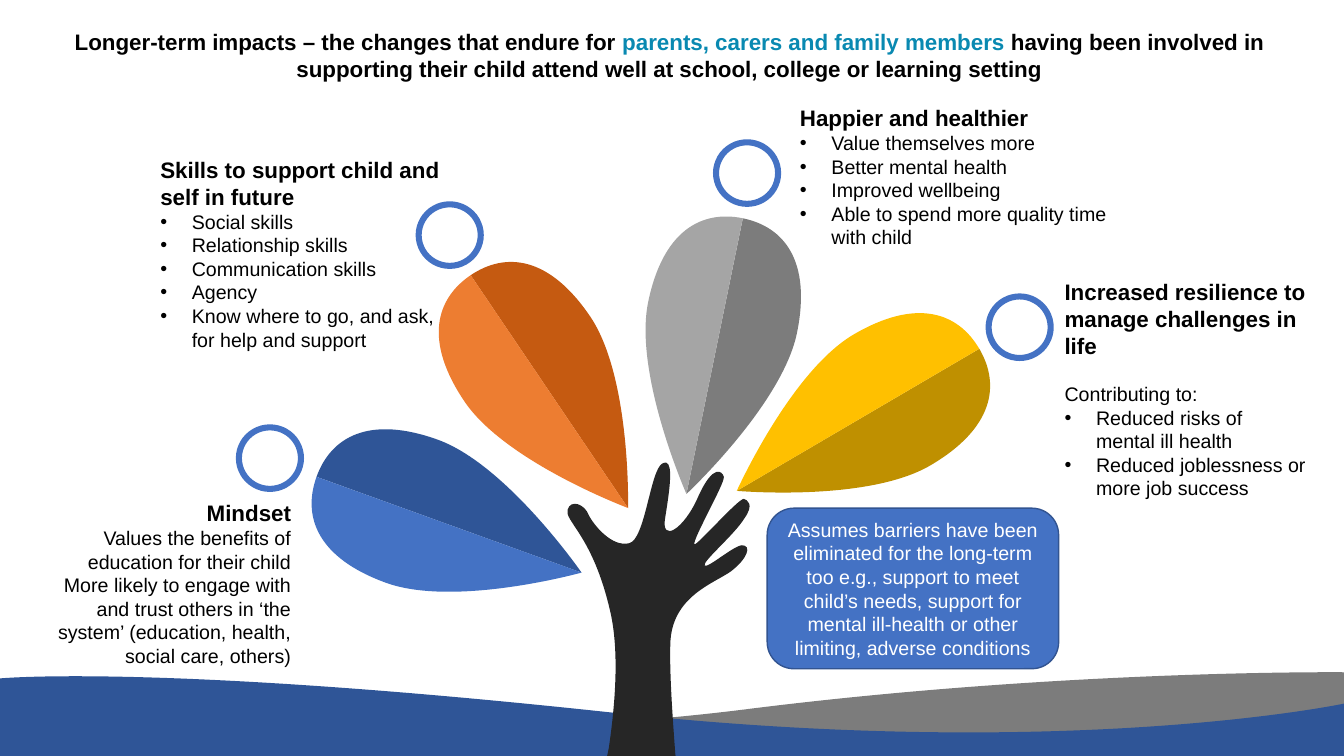
"""Build a slide showing the longer-term impacts for families as a hand-shaped tree."""
import math
import lxml.etree
import pptx
import pptx.dml.color
import pptx.enum.shapes
import pptx.enum.text
import pptx.oxml.ns
import pptx.util

Pt = pptx.util.Pt
qn = pptx.oxml.ns.qn
ALIGN = pptx.enum.text.PP_ALIGN
SHAPE = pptx.enum.shapes.MSO_SHAPE

COLOURS = {
    "ink": "000000", "paper": "FFFFFF", "teal": "0989B1", "trunk": "262626",
    "blue": "4472C4", "navy": "2F5597", "edge": "325491",
    "orange": "ED7D31", "rust": "C55A11", "silver": "A5A5A5", "grey": "7C7C7C",
    "yellow": "FFC000", "mustard": "BF9000",
}
FONTS = {
    "heading": {"name": "Arial", "size": Pt(16), "bold": True},
    "body": {"name": "Arial", "size": Pt(14), "bold": False},
}
FONTS["bullet"] = FONTS["body"]
SPACING = {"space_before": Pt(0), "space_after": Pt(0)}
CURVE_STEPS = 16

LEAF_TILT = 105.5
LEAF_EDGE = [(0, 0), (0, 0, 0.38, 0.27, 0.64, 0.27), (0.9, 0.27, 1, 0.15, 1, 0)]
LEAVES = [
    ((415.4, 409), (226.1, 340.6), "navy", "blue"),
    ((526.3, 350.6), (699.5, 249.1), "mustard", "yellow"),
    ((448.6, 362.9), (336.2, 196.6), "rust", "orange"),
    ((490.3, 352.8), (530.6, 155.9), "grey", "silver"),
]
RINGS = [(168.5, 303.1), (296.9, 143.8), (509.3, 99.5), (704, 209.6)]
FAR_HILL = [(960, 480.2), (960, 480.2, 760.8, 478.1, 536.4, 506.2),
            (311, 535, 0, 522, 0, 522), (0, 540), (960, 540)]
NEAR_HILL = [(0, 484.6), (0, 484.6, 110.9, 473.8, 437, 509),
             (763.2, 544.3, 960, 502.6, 960, 502.6), (960, 540.7), (0, 540.7)]
HAND = [
    (475.9, 330.5),
    (481, 331.9, 478.1, 351.4, 475.2, 369.4),
    (471.6, 388.8, 488.9, 378, 499, 354.2),
    (509.8, 330.5, 516.2, 337, 517, 340.6),
    (518.4, 344.2, 493.9, 386.6, 496.1, 388.8),
    (497.5, 390.2, 527.8, 355.7, 531.4, 356.4),
    (533.5, 357.1, 539.3, 360, 531.4, 370.8),
    (524.2, 382.3, 501.8, 401, 503.3, 403.9),
    (504.7, 406.8, 523.4, 390.2, 529.9, 389.5),
    (537.1, 389.5, 534.2, 398.9, 522, 408.2),
    (509.8, 416.9, 479.5, 426.2, 478.8, 460.1),
    (478.1, 483.1, 481, 519.1, 482.4, 539.3),
    (483.1, 541.4), (433.4, 541.4), (434.9, 534.2),
    (439.2, 504.7, 442.8, 465.1, 435.6, 435.6),
    (423.4, 383, 403.2, 372.2, 405.4, 364.3),
    (407.5, 356.4, 417.6, 360, 420.5, 367.9),
    (424.1, 375.1, 437, 391, 449.3, 388.1),
    (460.8, 385.9, 464.4, 336.2, 473, 331.2),
    (473.8, 330.5, 475.2, 330.5, 475.9, 330.5),
]

TITLE = [("heading", [
    ("Longer-term impacts – the changes that endure for ", "ink"),
    ("parents, carers and family members ", "teal"),
    ("having been involved in supporting their child attend well at school, "
     "college or learning setting", "ink")])]
MINDSET = [("heading", "Mindset"),
           ("body", "Values the benefits of education for their child"),
           ("body", "More likely to engage with and trust others in ‘the system’ "
                    "(education, health, social care, others)")]
SKILLS = [("heading", "Skills to support child and self in future"),
          ("bullet", "Social skills"),
          ("bullet", "Relationship skills"),
          ("bullet", "Communication skills"),
          ("bullet", "Agency"),
          ("bullet", "Know where to go, and ask, for help and support")]
RESILIENCE = [("heading", "Increased resilience to manage challenges in life"),
              ("body", "Contributing to:"),
              ("bullet", "Reduced risks of mental ill health"),
              ("bullet", "Reduced joblessness or more job success")]
HAPPIER = [("heading", "Happier and healthier"),
           ("bullet", "Value themselves more"),
           ("bullet", "Better mental health"),
           ("bullet", "Improved wellbeing"),
           ("bullet", "Able to spend more quality time with child")]
ASSUMPTION = [("body", [(
    "Assumes barriers have been eliminated for the long-term too e.g., support "
    "to meet child’s needs, support for mental ill-health or other limiting, "
    "adverse conditions", "paper")])]


def rgb(colour):
    """Return the named colour as an RGB value."""
    return pptx.dml.color.RGBColor.from_string(COLOURS[colour])


def apply(target, values):
    """Set every attribute in values on the target."""
    for attribute, value in values.items():
        setattr(target, attribute, value)


def paint(shape, fill, edge=None):
    """Give a shape a flat fill, an optional outline and no shadow."""
    shape.shadow.inherit = False
    shape.fill.solid()
    shape.fill.fore_color.rgb = rgb(fill)
    if edge:
        shape.line.color.rgb = rgb(edge)
        shape.line.width = Pt(1)
    else:
        shape.line.fill.background()


def pairs(segment):
    """Split a flat segment into x, y pairs."""
    return list(zip(segment[::2], segment[1::2]))


def move(outline, place):
    """Send every pair in an outline through the place function."""
    return [sum((place(*pair) for pair in pairs(segment)), ()) for segment in outline]


def trace(outline):
    """Sample an outline of lines and cubic curves as points."""
    points = [outline[0]]
    for segment in outline[1:]:
        if len(segment) == 2:
            points.append(segment)
            continue
        knots = [points[-1], *pairs(segment)]
        for step in range(1, CURVE_STEPS + 1):
            t = step / CURVE_STEPS
            weights = ((1 - t) ** 3, 3 * t * (1 - t) ** 2, 3 * t * t * (1 - t), t ** 3)
            points.append(tuple(sum(w * knot[axis] for w, knot in zip(weights, knots))
                                for axis in (0, 1)))
    return points


def add_outline(shapes, outline, fill):
    """Draw a closed, filled outline with true curves and return it."""
    vertices = [(Pt(x), Pt(y)) for x, y in trace(outline)]
    builder = shapes.build_freeform(*vertices[0], scale=1.0)
    builder.add_line_segments(vertices[1:], close=True)
    shape = builder.convert_to_shape()
    route = next(shape._element.iter(qn("a:path")))
    for line in route.findall(qn("a:lnTo")):
        route.remove(line)
    for segment in outline[1:]:
        command = lxml.etree.Element(qn("a:lnTo" if len(segment) == 2 else "a:cubicBezTo"))
        for x, y in pairs(segment):
            lxml.etree.SubElement(command, qn("a:pt"), x=str(Pt(x) - shape.left),
                                  y=str(Pt(y) - shape.top))
        route.insert(len(route) - 1, command)
    paint(shape, fill)
    return shape


def add_leaf(shapes, base, tip, dark, light):
    """Draw a leaf from base to tip as two mirrored, rotated halves."""
    leaf = shapes.add_group_shape().shapes
    length = math.dist(base, tip)
    turn = math.atan2(tip[1] - base[1], tip[0] - base[0]) - math.radians(LEAF_TILT)
    ux, uy = (length * f(math.radians(LEAF_TILT)) for f in (math.cos, math.sin))
    for side, fill in ((1, dark), (-1, light)):
        half = move(LEAF_EDGE, lambda along, across: (
            along * ux - side * across * uy, along * uy + side * across * ux))
        cx, cy = ((min(values) + max(values)) / 2 for values in zip(*trace(half)))
        shift_x = base[0] + cx * math.cos(turn) - cy * math.sin(turn) - cx
        shift_y = base[1] + cx * math.sin(turn) + cy * math.cos(turn) - cy
        placed = move(half, lambda x, y: (x + shift_x, y + shift_y))
        add_outline(leaf, placed, fill).rotation = math.degrees(turn) % 360


def add_ring(shapes, left, top):
    """Draw an empty marker ring."""
    ring = shapes.add_shape(SHAPE.DONUT, Pt(left), Pt(top), Pt(48.7), Pt(48.3))
    ring.adjustments[0] = 0.09
    paint(ring, "blue")


def add_bullet(paragraph):
    """Give a paragraph a hanging round bullet."""
    properties = paragraph._p.get_or_add_pPr()
    apply_indent = {"marL": Pt(22.5), "indent": -Pt(22.5)}
    for attribute, value in apply_indent.items():
        properties.set(attribute, str(value))
    lxml.etree.SubElement(properties, qn("a:buFont"), typeface="Arial")
    lxml.etree.SubElement(properties, qn("a:buChar"), char="•")


def write(frame, content, align):
    """Fill a text frame with styled paragraphs."""
    frame.word_wrap = True
    for index, (style, wording) in enumerate(content):
        paragraph = frame.add_paragraph() if index else frame.paragraphs[0]
        apply(paragraph, {"alignment": align, **SPACING})
        if style == "bullet":
            add_bullet(paragraph)
        for words, colour in [(wording, "ink")] if isinstance(wording, str) else wording:
            run = paragraph.add_run()
            run.text = words
            apply(run.font, FONTS[style])
            run.font.color.rgb = rgb(colour)


def add_text(shapes, place, content, align=ALIGN.LEFT):
    """Add a text box and return its frame."""
    frame = shapes.add_textbox(*map(Pt, place)).text_frame
    write(frame, content, align)
    frame.auto_size = pptx.enum.text.MSO_AUTO_SIZE.SHAPE_TO_FIT_TEXT
    return frame


def main():
    """Compose the slide and save it."""
    deck = pptx.Presentation()
    apply(deck, {"slide_width": Pt(960), "slide_height": Pt(540)})
    shapes = deck.slides.add_slide(deck.slide_layouts[6]).shapes
    for leaf in LEAVES:
        add_leaf(shapes, *leaf)
    for outline, fill in ((FAR_HILL, "grey"), (NEAR_HILL, "navy"), (HAND, "trunk")):
        add_outline(shapes, outline, fill)
    add_text(shapes, (10.2, 16.5, 936, 46), TITLE, ALIGN.CENTER)
    add_text(shapes, (28, 353, 187, 128), MINDSET, ALIGN.RIGHT)
    add_text(shapes, (107.4, 107.9, 214, 147.6), SKILLS)
    resilience = add_text(shapes, (753.3, 195.1, 187, 167), RESILIENCE)
    resilience.paragraphs[1].space_before = Pt(16.8)
    add_text(shapes, (564.3, 70.9, 248, 111.6), HAPPIER)
    for ring in RINGS:
        add_ring(shapes, *ring)
    assumption = shapes.add_shape(SHAPE.ROUNDED_RECTANGLE,
                                  Pt(548), Pt(363), Pt(208.2), Pt(114.7))
    paint(assumption, "blue", "edge")
    write(assumption.text_frame, ASSUMPTION, ALIGN.CENTER)
    assumption.text_frame.vertical_anchor = pptx.enum.text.MSO_ANCHOR.MIDDLE
    deck.save("out.pptx")


if __name__ == "__main__":
    main()
